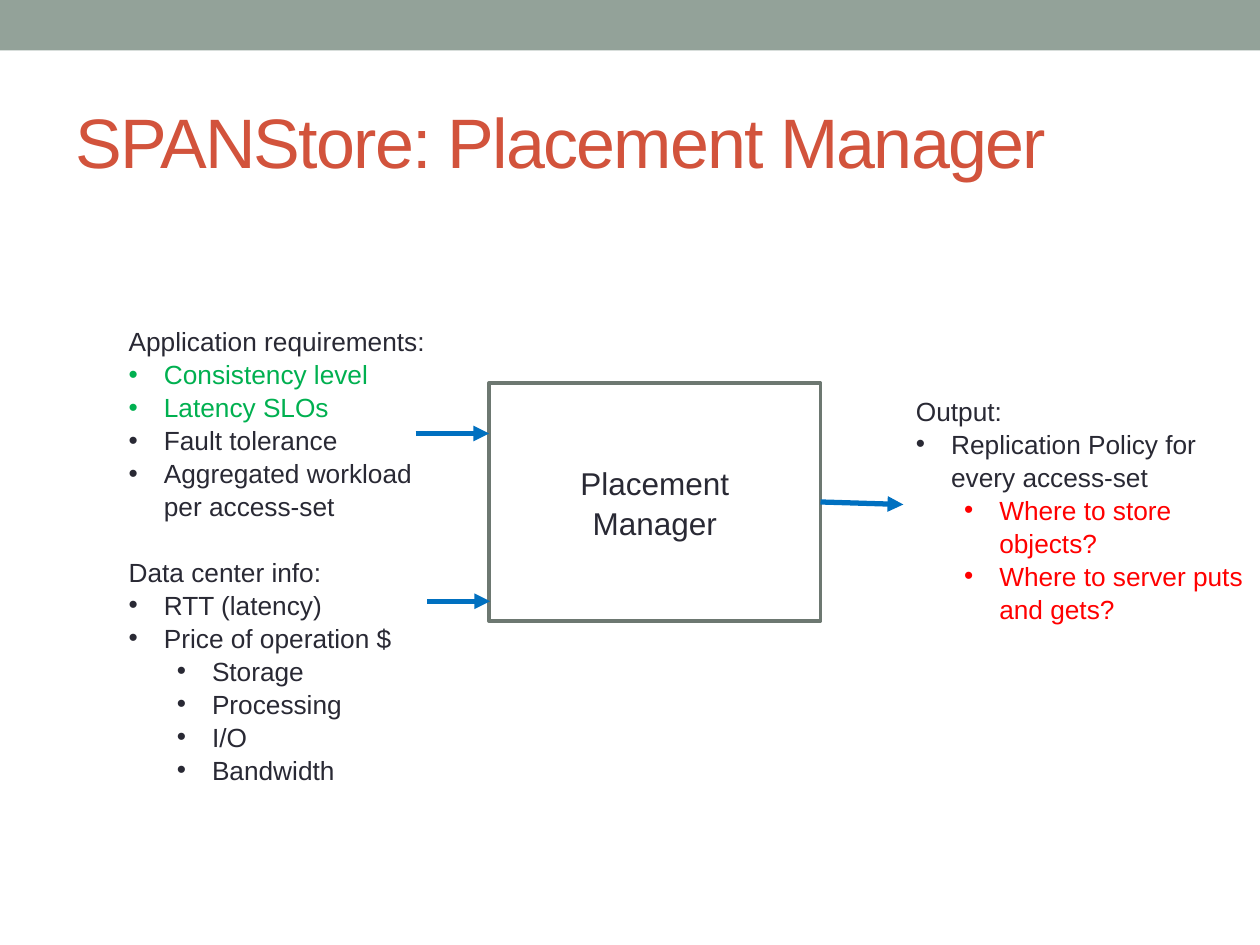
"""Build the Placement Manager slide with its inputs, outputs and arrows."""
from lxml.etree import SubElement
from pptx import Presentation
from pptx.dml.color import RGBColor
from pptx.enum.shapes import MSO_CONNECTOR, MSO_SHAPE
from pptx.enum.text import MSO_ANCHOR, MSO_AUTO_SIZE, PP_ALIGN
from pptx.oxml.ns import qn
from pptx.util import Cm, Pt

COLORS = {
    "band": "93A299",
    "title": "D2533C",
    "text": "292934",
    "border": "6D7871",
    "arrow": "0070C0",
    "green": "00B050",
    "red": "FF0000",
}
FONT = "Arial"
LINE_SPACING = 1.05
HANGING = Cm(0.71)
INDENTS = [HANGING, Cm(1.68)]

REQUIREMENTS = [
    ("Consistency level", 0, "green"),
    ("Latency SLOs", 0, "green"),
    ("Fault tolerance", 0, "text"),
    ("Aggregated workload per access-set", 0, "text"),
]
DATA_CENTER = [
    ("RTT (latency)", 0, "text"),
    ("Price of operation $", 0, "text"),
    ("Storage", 1, "text"),
    ("Processing", 1, "text"),
    ("I/O", 1, "text"),
    ("Bandwidth", 1, "text"),
]
OUTPUT = [
    ("Replication Policy for every access-set", 0, "text"),
    ("Where to store objects?", 1, "red"),
    ("Where to server puts and gets?", 1, "red"),
]


class SlideBuilder:
    def __init__(self, slide):
        self.slide = slide
        self.bodies = list(slide.placeholders)[1:]

    def color(self, name):
        return RGBColor.from_string(COLORS[name])

    def place(self, shape, left, top, width, height):
        shape.left, shape.top = Cm(left), Cm(top)
        shape.width, shape.height = Cm(width), Cm(height)

    def run(self, paragraph, text, size, color):
        run = paragraph.add_run()
        run.text = text
        run.font.name = FONT
        run.font.size = Pt(size)
        run.font.bold = False
        run.font.color.rgb = self.color(color)
        return run

    def title(self, text, *box):
        shape = self.slide.shapes.title
        self.place(shape, *box)
        frame = shape.text_frame
        frame.vertical_anchor = MSO_ANCHOR.MIDDLE
        frame.auto_size = MSO_AUTO_SIZE.NONE
        paragraph = frame.paragraphs[0]
        paragraph.alignment = PP_ALIGN.LEFT
        run = self.run(paragraph, text, 40, "title")
        run.font._element.set("spc", "-100")

    def rectangle(self, *box, fill=None, line=None, lines=()):
        shape = self.slide.shapes.add_shape(MSO_SHAPE.RECTANGLE, *map(Cm, box))
        shape.shadow.inherit = False
        if fill:
            shape.fill.solid()
            shape.fill.fore_color.rgb = self.color(fill)
        else:
            shape.fill.background()
        if line:
            shape.line.color.rgb = self.color(line)
            shape.line.width = Pt(2.08)
        else:
            shape.line.fill.background()
        frame = shape.text_frame
        frame.vertical_anchor = MSO_ANCHOR.MIDDLE
        for index, text in enumerate(lines):
            paragraph = frame.add_paragraph() if index else frame.paragraphs[0]
            paragraph.alignment = PP_ALIGN.CENTER
            paragraph.line_spacing = LINE_SPACING
            self.run(paragraph, text, 18, "text")

    def bullet_list(self, heading, items, *box):
        shape = self.bodies.pop(0)
        self.place(shape, *box)
        frame = shape.text_frame
        frame.word_wrap = True
        frame.auto_size = MSO_AUTO_SIZE.NONE
        frame.vertical_anchor = MSO_ANCHOR.TOP
        self.list_paragraph(frame.paragraphs[0], heading, "text")
        for text, level, color in items:
            self.list_paragraph(frame.add_paragraph(), text, color, level)

    def list_paragraph(self, paragraph, text, color, level=None):
        paragraph.level = level or 0
        paragraph.space_before = paragraph.space_after = Pt(0)
        paragraph.line_spacing = LINE_SPACING
        properties = paragraph._p.get_or_add_pPr()
        if level is None:
            properties.set("marL", "0")
            properties.set("indent", "0")
            SubElement(properties, qn("a:buNone"))
        else:
            properties.set("marL", str(INDENTS[level]))
            properties.set("indent", str(-HANGING))
            SubElement(properties, qn("a:buFont"), typeface=FONT)
            SubElement(properties, qn("a:buChar"), char="•")
        self.run(paragraph, text, 15, color)

    def arrow(self, *ends):
        connector = self.slide.shapes.add_connector(MSO_CONNECTOR.STRAIGHT, *map(Cm, ends))
        connector.line.color.rgb = self.color("arrow")
        connector.line.width = Pt(3)
        SubElement(connector.line._get_or_add_ln(), qn("a:tailEnd"), type="triangle")
        SubElement(connector._element.spPr, qn("a:effectLst"))

    def remove_empty_bodies(self):
        for shape in self.bodies:
            shape._element.getparent().remove(shape._element)


def main():
    presentation = Presentation()
    presentation.slide_width, presentation.slide_height = Cm(25.4), Cm(19.05)
    layout = presentation.slide_layouts.get_by_name("Comparison")
    builder = SlideBuilder(presentation.slides.add_slide(layout))

    builder.rectangle(0, 0, 25.4, 1.02, fill="band")
    builder.title("SPANStore: Placement Manager", 1.27, 1.47, 22.86, 2.74)
    builder.rectangle(9.86, 7.72, 6.68, 4.8, line="border", lines=["Placement", "Manager"])
    builder.bullet_list("Application requirements:", REQUIREMENTS, 2.34, 6.4, 7.01, 4.75)
    builder.bullet_list("Data center info:", DATA_CENTER, 2.34, 11.05, 7.32, 4.75)
    builder.bullet_list("Output:", OUTPUT, 18.21, 7.8, 7.19, 4.75)
    builder.arrow(8.38, 8.74, 9.86, 8.74)
    builder.arrow(8.61, 12.12, 9.88, 12.12)
    builder.arrow(16.54, 10.12, 18.21, 10.17)
    builder.remove_empty_bodies()
    presentation.save("out.pptx")


if __name__ == "__main__":
    main()
